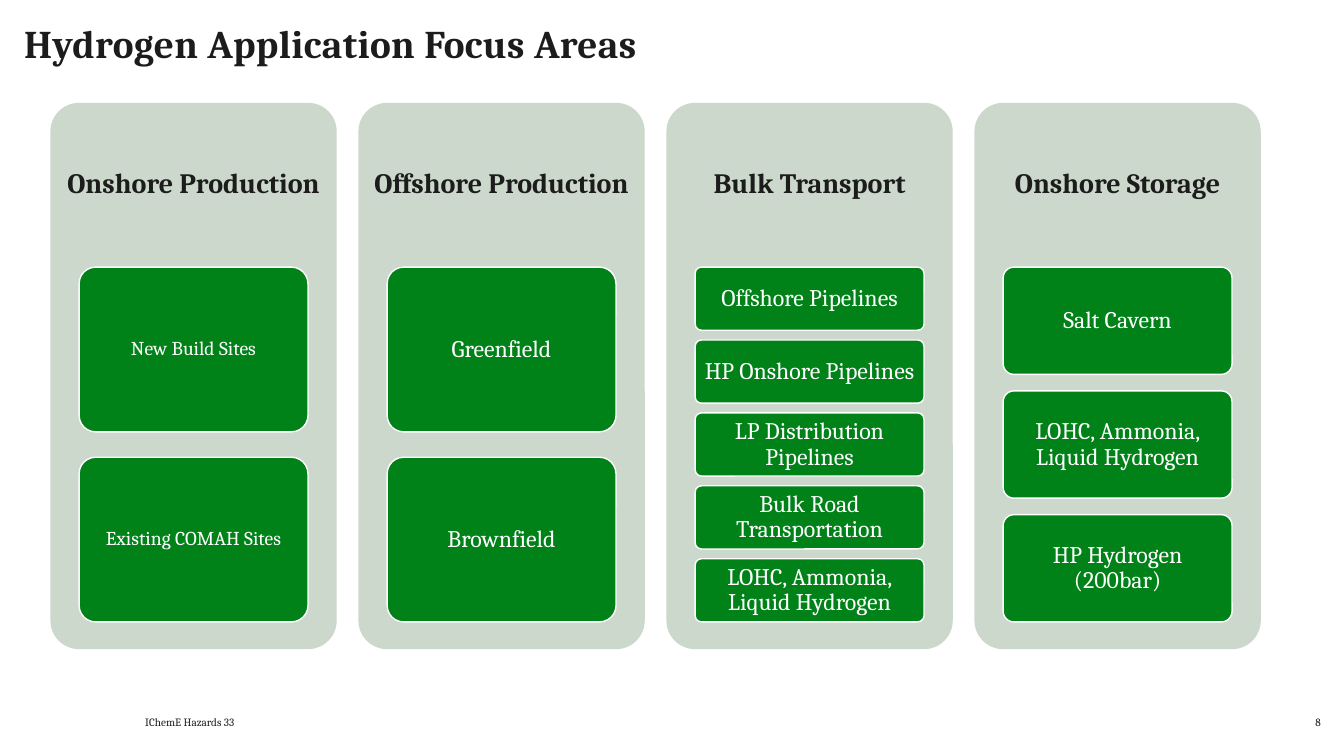
from dataclasses import dataclass

from pptx import Presentation
from pptx.dml.color import RGBColor
from pptx.enum.shapes import MSO_SHAPE
from pptx.enum.text import MSO_ANCHOR, PP_ALIGN
from pptx.shapes.autoshape import Shape
from pptx.slide import Slide
from pptx.text.text import TextFrame
from pptx.util import Inches, Pt

ROUNDED = MSO_SHAPE.ROUNDED_RECTANGLE
TOP, MIDDLE, BOTTOM = MSO_ANCHOR.TOP, MSO_ANCHOR.MIDDLE, MSO_ANCHOR.BOTTOM
LEFT, CENTER, RIGHT = PP_ALIGN.LEFT, PP_ALIGN.CENTER, PP_ALIGN.RIGHT


@dataclass(frozen=True)
class Theme:
    font: str = "Cambria"
    ink: RGBColor = RGBColor(0x1C, 0x1C, 0x1C)
    white: RGBColor = RGBColor(0xFF, 0xFF, 0xFF)
    panel: RGBColor = RGBColor(0xCC, 0xD8, 0xCC)
    card: RGBColor = RGBColor(0x01, 0x82, 0x19)
    title_size: float = 28
    heading_size: float = 20
    card_size: float = 17
    small_card_size: float = 14
    footer_size: float = 8


THEME = Theme()


@dataclass(frozen=True)
class Box:
    left: float
    top: float
    width: float
    height: float


@dataclass(frozen=True)
class TextStyle:
    size: float
    color: RGBColor = THEME.ink
    bold: bool = False
    align: PP_ALIGN = LEFT
    anchor: MSO_ANCHOR = BOTTOM
    inset_x: float = 0
    inset_y: float = 0
    line_spacing: float = 0.9
    tracking: int = 0  # hundredths of a point


@dataclass(frozen=True)
class FocusArea:
    heading: str
    items: tuple[str, ...]
    item_size: float = THEME.card_size


FOCUS_AREAS = (
    FocusArea("Onshore Production", ("New Build Sites", "Existing COMAH Sites"),
              THEME.small_card_size),
    FocusArea("Offshore Production", ("Greenfield", "Brownfield")),
    FocusArea("Bulk Transport", (
        "Offshore Pipelines", "HP Onshore Pipelines", "LP Distribution Pipelines",
        "Bulk Road Transportation", "LOHC, Ammonia, Liquid Hydrogen")),
    FocusArea("Onshore Storage", (
        "Salt Cavern", "LOHC, Ammonia, Liquid Hydrogen", "HP Hydrogen (200bar)")),
)

# Column layout, in inches
PANEL = Box(0.5, 1.02, 2.84, 5.42)
PANEL_PITCH = 3.055
HEADING_HEIGHT = 1.62
CARD_INDENT = 0.285
CARD_WIDTH = 2.27
STACK_TOP, STACK_HEIGHT = 2.65, 3.52
GAP_RATIO = 2 / 13  # gap between cards relative to card height


def write_text(frame: TextFrame, text: str, style: TextStyle) -> None:
    frame.text = text
    frame.word_wrap = True
    frame.vertical_anchor = style.anchor
    frame.margin_left = frame.margin_right = Inches(style.inset_x)
    frame.margin_top = frame.margin_bottom = Inches(style.inset_y)
    paragraph = frame.paragraphs[0]
    paragraph.alignment = style.align
    paragraph.line_spacing = style.line_spacing
    run = paragraph.runs[0]
    run.font.name = THEME.font
    run.font.size = Pt(style.size)
    run.font.bold = style.bold
    run.font.color.rgb = style.color
    if style.tracking:
        run.font._element.set("spc", str(style.tracking))


def add_text(slide: Slide, box: Box, text: str, style: TextStyle) -> None:
    label = slide.shapes.add_textbox(
        Inches(box.left), Inches(box.top), Inches(box.width), Inches(box.height))
    write_text(label.text_frame, text, style)


def add_rounded(slide: Slide, box: Box, fill: RGBColor) -> Shape:
    rounded = slide.shapes.add_shape(
        ROUNDED, Inches(box.left), Inches(box.top), Inches(box.width), Inches(box.height))
    rounded.adjustments[0] = 0.1
    rounded.shadow.inherit = False
    rounded.fill.solid()
    rounded.fill.fore_color.rgb = fill
    rounded.line.fill.background()
    return rounded


def add_focus_area(slide: Slide, area: FocusArea, left: float) -> None:
    # Panel and heading
    add_rounded(slide, Box(left, PANEL.top, PANEL.width, PANEL.height), THEME.panel)
    add_text(slide, Box(left, PANEL.top, PANEL.width, HEADING_HEIGHT), area.heading,
             TextStyle(THEME.heading_size, bold=True, align=CENTER, anchor=MIDDLE,
                       inset_x=0.08, inset_y=0.08))

    # Cards share the stack height evenly
    count = len(area.items)
    height = STACK_HEIGHT / (count + (count - 1) * GAP_RATIO)
    style = TextStyle(area.item_size, THEME.white, align=CENTER, anchor=MIDDLE,
                      inset_x=0.05, inset_y=0.04)
    for row, item in enumerate(area.items):
        top = STACK_TOP + row * height * (1 + GAP_RATIO)
        card = add_rounded(
            slide, Box(left + CARD_INDENT, top, CARD_WIDTH, height), THEME.card)
        card.line.color.rgb = THEME.white
        card.line.width = Pt(1)
        write_text(card.text_frame, item, style)


def main() -> None:
    presentation = Presentation()
    presentation.slide_width = Inches(13.33)
    presentation.slide_height = Inches(7.5)
    slide = presentation.slides.add_slide(presentation.slide_layouts[6])

    # Title
    add_text(slide, Box(0.24, 0.24, 12.86, 0.79), "Hydrogen Application Focus Areas",
             TextStyle(THEME.title_size, bold=True, anchor=TOP, tracking=30))

    # Focus area columns
    for column, area in enumerate(FOCUS_AREAS):
        add_focus_area(slide, area, PANEL.left + column * PANEL_PITCH)

    # Footer and slide number
    add_text(slide, Box(1.44, 7.03, 5.12, 0.2), "IChemE Hazards 33",
             TextStyle(THEME.footer_size, line_spacing=1.0))
    add_text(slide, Box(12.51, 7.03, 0.59, 0.2), "8",
             TextStyle(THEME.footer_size, align=RIGHT, line_spacing=1.0))

    presentation.save("out.pptx")


if __name__ == "__main__":
    main()
